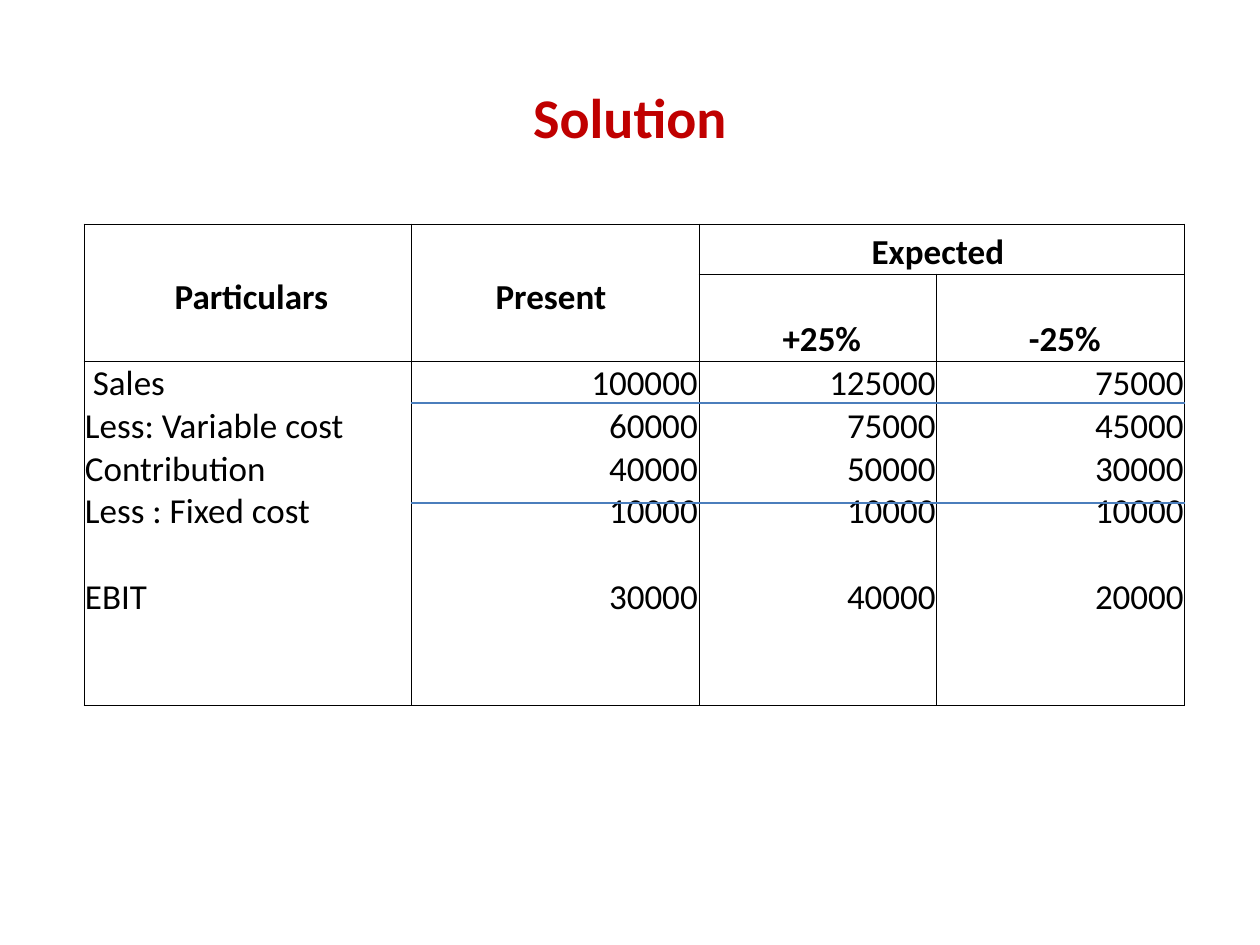
from dataclasses import dataclass

from lxml import etree
from pptx import Presentation
from pptx import util as u
from pptx.dml.color import RGBColor
from pptx.enum import shapes, text
from pptx.oxml import ns

LEFT, CENTER, RIGHT = text.PP_ALIGN.LEFT, text.PP_ALIGN.CENTER, text.PP_ALIGN.RIGHT
TOP, MIDDLE, BOTTOM = text.MSO_ANCHOR.TOP, text.MSO_ANCHOR.MIDDLE, text.MSO_ANCHOR.BOTTOM


@dataclass(frozen=True)
class Theme:
    font: str = "Calibri"
    heading: str = "C00000"
    ink: str = "000000"
    rule: str = "4B7EBC"
    title_size: int = 32
    table_size: int = 20
    border_width: float = 0.5
    rule_width: float = 0.75


THEME = Theme()
TITLE = "Solution"
HEADINGS = [
    (" Particulars", (0, 0), (1, 0), MIDDLE),
    ("Present ", (0, 1), (1, 1), MIDDLE),
    ("Expected ", (0, 2), (0, 3), BOTTOM),
    (" +25%", (1, 2), (1, 2), BOTTOM),
    (" -25%", (1, 3), (1, 3), BOTTOM),
]
STATEMENT = [
    (" Sales", "100000", "125000", "75000"),
    ("Less: Variable cost", "60000", "75000", "45000"),
    ("Contribution", "40000", "50000", "30000"),
    ("Less : Fixed cost", "10000", "10000", "10000"),
    ("EBIT", "30000", "40000", "20000"),
]

SLIDE_WIDTH, SLIDE_HEIGHT = 1260, 945
TITLE_BOX = (63, 38, 1134, 157)
TABLE_LEFT, TABLE_TOP = 84, 224
COLUMN_WIDTHS = [327, 288, 238, 248]
ROW_HEIGHTS = [50, 87, 344]
RULE_TOPS = [403, 503]
HEADING_DROP = 10
EBIT_GAP = 43


def px(length):
    return u.Emu(round(length * 914400 / 126))


def write(frame, lines, size=THEME.table_size, color=THEME.ink, bold=False,
          align=LEFT, last_gap=0):
    for index, line in enumerate(lines):
        paragraph = frame.paragraphs[0] if index == 0 else frame.add_paragraph()
        paragraph.alignment = align
        run = paragraph.add_run()
        run.text = line
        run.font.name = THEME.font
        run.font.size = u.Pt(size)
        run.font.bold = bold
        run.font.color.rgb = RGBColor.from_string(color)
    if last_gap:
        paragraph.space_before = px(last_gap)


def outline(cell):
    properties = cell._tc.get_or_add_tcPr()
    for index, side in enumerate(("lnL", "lnR", "lnT", "lnB")):
        border = etree.Element(ns.qn(f"a:{side}"), w=str(u.Pt(THEME.border_width)))
        fill = etree.SubElement(border, ns.qn("a:solidFill"))
        etree.SubElement(fill, ns.qn("a:srgbClr"), val=THEME.ink)
        properties.insert(index, border)


def add_statement(slide):
    table = slide.shapes.add_table(
        len(ROW_HEIGHTS), len(COLUMN_WIDTHS), px(TABLE_LEFT), px(TABLE_TOP),
        px(sum(COLUMN_WIDTHS)), px(sum(ROW_HEIGHTS))).table
    table.first_row = table.horz_banding = False
    for column, width in zip(table.columns, COLUMN_WIDTHS):
        column.width = px(width)
    for row, height in zip(table.rows, ROW_HEIGHTS):
        row.height = px(height)
    for cell in table.iter_cells():
        cell.margin_left = cell.margin_right = cell.margin_top = px(1)
        cell.margin_bottom = 0
        cell.fill.background()
        outline(cell)

    for heading, first, last, anchor in HEADINGS:
        cell = table.cell(*first)
        if first != last:
            cell.merge(table.cell(*last))
        cell.vertical_anchor = anchor
        if anchor == MIDDLE:
            cell.margin_top = px(HEADING_DROP)
        write(cell.text_frame, [heading], bold=True, align=CENTER)

    for index, entries in enumerate(zip(*STATEMENT)):
        cell = table.cell(2, index)
        cell.vertical_anchor = TOP
        write(cell.text_frame, entries, align=RIGHT if index else LEFT, last_gap=EBIT_GAP)


def add_rule(slide, top):
    start = TABLE_LEFT + COLUMN_WIDTHS[0]
    end = TABLE_LEFT + sum(COLUMN_WIDTHS)
    rule = slide.shapes.add_connector(
        shapes.MSO_CONNECTOR.STRAIGHT, px(start), px(top), px(end), px(top))
    rule.line.color.rgb = RGBColor.from_string(THEME.rule)
    rule.line.width = u.Pt(THEME.rule_width)
    etree.SubElement(rule._element.spPr, ns.qn("a:effectLst"))


def main():
    deck = Presentation()
    deck.slide_width, deck.slide_height = px(SLIDE_WIDTH), px(SLIDE_HEIGHT)
    slide = deck.slides.add_slide(deck.slide_layouts[5])
    title = slide.shapes.title
    title.left, title.top, title.width, title.height = map(px, TITLE_BOX)
    title.text_frame.vertical_anchor = MIDDLE
    write(title.text_frame, [TITLE], size=THEME.title_size, color=THEME.heading,
          bold=True, align=CENTER)
    add_statement(slide)
    for top in RULE_TOPS:
        add_rule(slide, top)
    deck.save("out.pptx")


if __name__ == "__main__":
    main()
